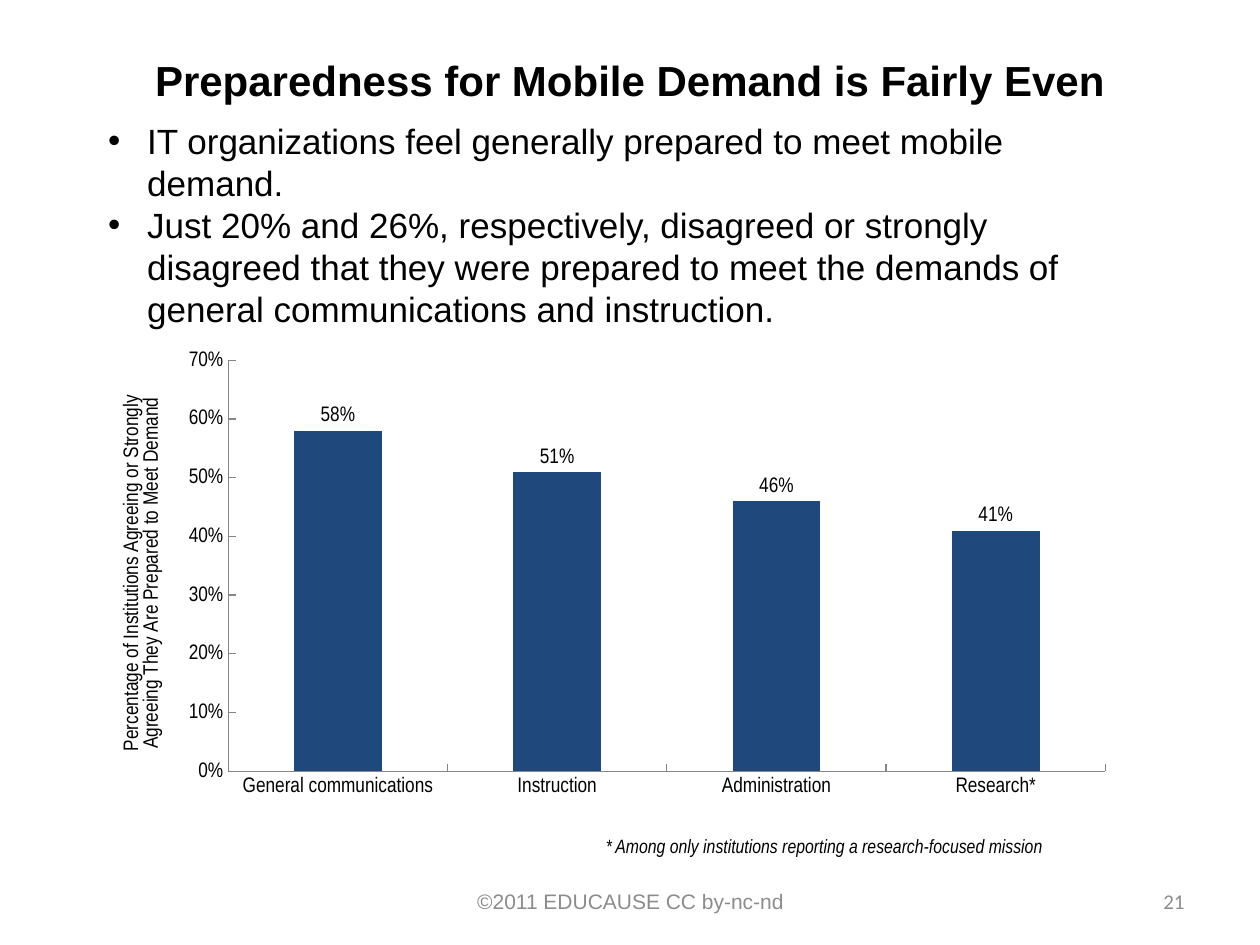
from dataclasses import dataclass

from lxml import etree
from pptx import Presentation
from pptx import util as u
from pptx.chart.data import CategoryChartData
from pptx.dml.color import RGBColor
from pptx.enum import chart as charts, text
from pptx.oxml import parse_xml
from pptx.oxml.ns import nsdecls, qn


@dataclass(frozen=True)
class Theme:
    ink: str = "000000"
    muted: str = "8C8C8C"
    bar: str = "1F497D"
    axis: str = "868686"
    body_font: str = "Arial"
    chart_font: str = "Arial Narrow"
    number_font: str = "Calibri"
    title_size: int = 24
    bullet_size: int = 20
    small_size: int = 12
    note_size: int = 11


THEME = Theme()
BULLET_INDENT = u.Inches(0.31)
BULLETS = (
    "IT organizations feel generally prepared to meet mobile demand.",
    "Just 20% and 26%, respectively, disagreed or strongly disagreed that they "
    "were prepared to meet the demands of general communications and instruction.",
)
PREPARED = {
    "General communications": 0.58,
    "Instruction": 0.51,
    "Administration": 0.46,
    "Research*": 0.41,
}
AXIS_TITLE = ("Percentage of Institutions Agreeing or Strongly Agreeing "
              "They Are Prepared to Meet Demand")
PLOT_SHARES = {"x": 0.133, "y": 0.045, "w": 0.848, "h": 0.863}


def inches(*lengths):
    return [u.Inches(length) for length in lengths]


def style_font(font, name, size, color=THEME.ink, bold=False, italic=False):
    font.name, font.size = name, u.Pt(size)
    font.bold, font.italic = bold, italic
    font.color.rgb = RGBColor.from_string(color)


def set_title(slide, words):
    title = slide.shapes.title
    title.left, title.top, title.width, title.height = inches(0.5, 0.25, 9, 0.77)
    frame = title.text_frame
    frame.text = words
    frame.vertical_anchor = text.MSO_ANCHOR.MIDDLE
    paragraph = frame.paragraphs[0]
    paragraph.alignment = text.PP_ALIGN.CENTER
    style_font(paragraph.font, THEME.body_font, THEME.title_size, bold=True)


def add_bullet(paragraph):
    properties = paragraph._p.get_or_add_pPr()
    properties.set("marL", str(BULLET_INDENT))
    properties.set("indent", str(-BULLET_INDENT))
    etree.SubElement(properties, qn("a:buFont")).set("typeface", THEME.body_font)
    etree.SubElement(properties, qn("a:buChar")).set("char", "•")


def add_text(slide, box, lines, font, size, align=text.PP_ALIGN.LEFT,
             anchor=text.MSO_ANCHOR.TOP, bulleted=False, **style):
    frame = slide.shapes.add_textbox(*inches(*box)).text_frame
    frame.word_wrap = True
    frame.vertical_anchor = anchor
    frame.text = "\n".join(lines)
    for paragraph in frame.paragraphs:
        paragraph.alignment = align
        if bulleted:
            add_bullet(paragraph)
        style_font(paragraph.font, font, size, **style)


def place_plot(chart):
    """Fix the inner plot area at its shares of the chart frame."""
    modes = "".join(f'<c:{side}Mode val="edge"/>' for side in "xy")
    shares = "".join(f'<c:{key} val="{share}"/>' for key, share in PLOT_SHARES.items())
    plot_area = chart._chartSpace.chart.plotArea
    for layout in plot_area.findall(qn("c:layout")):
        plot_area.remove(layout)
    plot_area.insert(0, parse_xml(
        f'<c:layout {nsdecls("c")}><c:manualLayout><c:layoutTarget val="inner"/>'
        f"{modes}{shares}</c:manualLayout></c:layout>"))


def format_axes(chart):
    for axis in (chart.category_axis, chart.value_axis):
        axis.has_major_gridlines = False
        axis.major_tick_mark = charts.XL_TICK_MARK.INSIDE
        axis.minor_tick_mark = charts.XL_TICK_MARK.NONE
        axis.format.line.color.rgb = RGBColor.from_string(THEME.axis)
        axis.format.line.width = u.Pt(0.75)
    values = chart.value_axis
    values.minimum_scale, values.maximum_scale, values.major_unit = 0, 0.7, 0.1
    values.tick_labels.number_format = "0%"
    values.tick_labels.number_format_is_linked = False
    frame = values.axis_title.text_frame
    frame.text = AXIS_TITLE
    style_font(frame.paragraphs[0].font, THEME.chart_font, THEME.small_size)


def add_column_chart(slide, box):
    data = CategoryChartData(number_format="0%")
    data.categories = list(PREPARED)
    data.add_series("Series 1", list(PREPARED.values()))
    chart = slide.shapes.add_chart(
        charts.XL_CHART_TYPE.COLUMN_CLUSTERED, *inches(*box), data).chart
    chart.has_title = chart.has_legend = False
    style_font(chart.font, THEME.chart_font, THEME.small_size)
    format_axes(chart)
    place_plot(chart)

    plot = chart.plots[0]
    plot.gap_width = 150
    plot.vary_by_categories = False
    fill = plot.series[0].format.fill
    fill.solid()
    fill.fore_color.rgb = RGBColor.from_string(THEME.bar)
    plot.has_data_labels = True
    labels = plot.data_labels
    labels.show_value = True
    labels.number_format, labels.number_format_is_linked = "0%", False
    labels.position = charts.XL_LABEL_POSITION.OUTSIDE_END


def main():
    presentation = Presentation()
    presentation.slide_width, presentation.slide_height = inches(10, 7.5)
    slide = presentation.slides.add_slide(presentation.slide_layouts[5])

    set_title(slide, "Preparedness for Mobile Demand is Fairly Even")
    add_column_chart(slide, (0.72, 2.69, 8.21, 3.78))
    add_text(slide, (3.42, 6.95, 3.17, 0.4), ["©2011 EDUCAUSE CC by-nc-nd"],
             THEME.body_font, THEME.small_size, text.PP_ALIGN.CENTER,
             text.MSO_ANCHOR.MIDDLE, color=THEME.muted)
    add_text(slide, (7.17, 6.95, 2.33, 0.4), ["21"],
             THEME.number_font, THEME.small_size, text.PP_ALIGN.RIGHT,
             text.MSO_ANCHOR.MIDDLE, color=THEME.muted)
    add_text(slide, (0.76, 0.9, 8.17, 1.78), BULLETS,
             THEME.body_font, THEME.bullet_size, bulleted=True)
    add_text(slide, (4.71, 6.57, 4.01, 0.29),
             ["* Among only institutions reporting a research-focused mission"],
             THEME.chart_font, THEME.note_size, italic=True)

    presentation.save("out.pptx")


if __name__ == "__main__":
    main()
